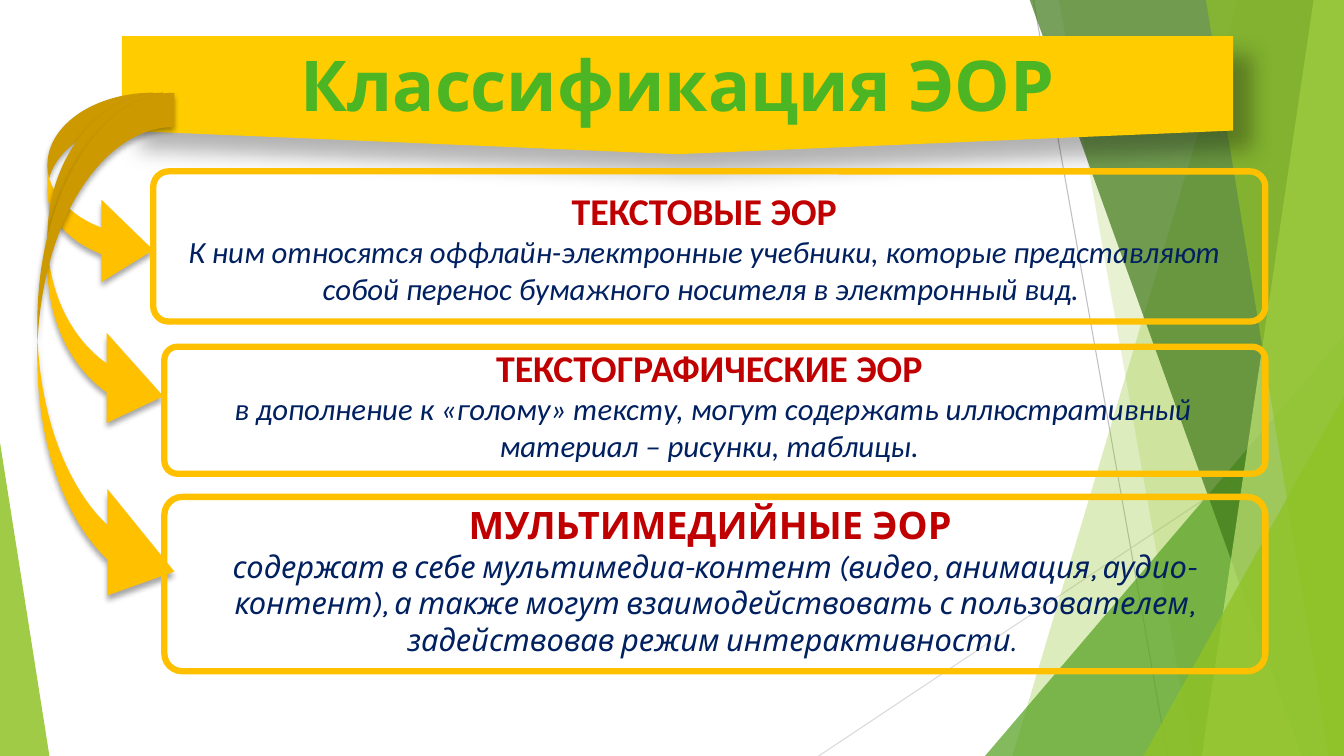
from lxml import etree
from pptx import Presentation
from pptx import util as u
from pptx.dml.color import RGBColor
from pptx.enum import shapes, text
from pptx.oxml.ns import qn

COLORS = {
    "lime": "90C226", "green": "54A021", "dark": "3F7819", "pale": "C0E474",
    "silver": "BFBFBF", "mist": "D9D9D9", "banner": "FFCC00", "amber": "FFC000",
    "title": "4CB523", "heading": "C00000", "body": "002060", "shadow": "000000",
}
TOP, RIGHT, BOTTOM = -0.01, 13.33, 7.5
KIND = shapes.MSO_SHAPE

# Each band reaches the right edge: top x, bottom x, colour, opacity in percent
BACK_BANDS = [(12.28, 10.04, "lime", 30), (10.5, 11.83, "lime", 20)]
FRONT_BANDS = [(10.21, 12.91, "dark", 70), (13.03, 11.92, "pale", 70),
               (11.96, 13.18, "lime", 65)]

# Arrow box, panel box, text box, anchor, font, heading, description
CLASSES = [
    ((0.47, 0.92, 1.05, 1.97), (1.52, 1.7, 11.03, 1.49), (1.42, 1.8, 11.13, 1.3),
     "MIDDLE", "Calibri", "ТЕКСТОВЫЕ ЭОР",
     "К ним относятся оффлайн-электронные учебники, которые представляют "
     "собой перенос бумажного носителя в электронный вид. "),
    ((0.47, 0.92, 1.15, 3.46), (1.63, 3.44, 10.92, 1.26), (1.63, 3.36, 10.81, 1.3),
     "MIDDLE", "Calibri", "ТЕКСТОГРАФИЧЕСКИЕ ЭОР",
     " в дополнение к «голому» тексту, могут содержать иллюстративный "
     "материал – рисунки, таблицы."),
    ((0.37, 0.92, 1.36, 5.28), (1.63, 4.93, 10.92, 1.73), (1.63, 4.93, 10.92, 1.67),
     "TOP", "Karla", "МУЛЬТИМЕДИЙНЫЕ ЭОР ",
     "содержат в себе мультимедиа-контент (видео, анимация, аудио-контент), "
     "а также могут взаимодействовать с пользователем, задействовав режим "
     "интерактивности. "),
]


def color(name):
    return RGBColor.from_string(COLORS[name])


def inches(values):
    return [u.Inches(value) for value in values]


class SlideBuilder:
    def __init__(self, page):
        self.page = page

    def paint(self, shape, fill, opacity=100):
        shape.shadow.inherit = False
        shape.line.fill.background()
        shape.fill.solid()
        shape.fill.fore_color.rgb = color(fill)
        if opacity < 100:
            tint = shape.element.spPr.find(".//" + qn("a:srgbClr"))
            etree.SubElement(tint, qn("a:alpha"), val=str(opacity * 1000))

    def cast_shadow(self, shape, opacity, blur, distance, angle):
        effects = shape.element.spPr.find(qn("a:effectLst"))
        outer = etree.SubElement(
            effects, qn("a:outerShdw"), blurRad=str(u.Pt(blur)),
            dist=str(u.Pt(distance)), dir=str(angle * 60000),
            algn="tl", rotWithShape="0")
        tint = etree.SubElement(outer, qn("a:srgbClr"), val=COLORS["shadow"])
        etree.SubElement(tint, qn("a:alpha"), val=str(opacity * 1000))

    def shape(self, kind, box, fill, opacity=100, adjust=()):
        shape = self.page.shapes.add_shape(kind, *inches(box))
        for index, value in enumerate(adjust):
            shape.adjustments[index] = value
        self.paint(shape, fill, opacity)
        return shape

    def band(self, top_x, bottom_x, fill, opacity):
        corners = [(RIGHT, TOP), (RIGHT, BOTTOM), (bottom_x, BOTTOM)]
        outline = self.page.shapes.build_freeform(*inches((top_x, TOP)))
        outline.add_line_segments([inches(corner) for corner in corners])
        self.paint(outline.convert_to_shape(), fill, opacity)

    def line(self, ends, stroke):
        line = self.page.shapes.add_connector(
            shapes.MSO_CONNECTOR.STRAIGHT, *inches(ends))
        line.line.color.rgb = color(stroke)
        line.line.width = u.Pt(0.75)
        etree.SubElement(line.element.spPr, qn("a:effectLst"))

    def arrow(self, box):
        arrow = self.shape(KIND.CURVED_RIGHT_ARROW, box, "amber",
                           adjust=(0.25, 0.778, 0.489))
        self.cast_shadow(arrow, 35, 4, 3, 90)

    def panel(self, box):
        panel = self.shape(KIND.ROUNDED_RECTANGLE, box, "amber", adjust=(0.103,))
        panel.fill.background()
        panel.line.color.rgb = color("amber")
        panel.line.width = u.Pt(4.5)

    def set_text(self, para, words, size, face, ink, bold=False, italic=False):
        para.text = words
        para.alignment = text.PP_ALIGN.CENTER
        font = para.font
        font.size, font.name, font.bold, font.italic = u.Pt(size), face, bold, italic
        font.color.rgb = color(ink)

    def title(self, box, words):
        """Put the title placeholder above the shapes drawn so far."""
        title = self.page.shapes.title
        title.left, title.top, title.width, title.height = inches(box)
        self.page.shapes.element.append(title.element)
        frame = title.text_frame
        frame.auto_size = text.MSO_AUTO_SIZE.NONE
        frame.vertical_anchor = text.MSO_ANCHOR.MIDDLE
        self.set_text(frame.paragraphs[0], words, 50, "Karla", "title", bold=True)

    def description(self, box, anchor, face, heading, body):
        frame = self.page.shapes.add_textbox(*inches(box)).text_frame
        frame.word_wrap = True
        frame.auto_size = text.MSO_AUTO_SIZE.SHAPE_TO_FIT_TEXT
        frame.vertical_anchor = text.MSO_ANCHOR[anchor]
        self.set_text(frame.paragraphs[0], heading, 27, face, "heading", bold=True)
        self.set_text(frame.add_paragraph(), body, 22, face, "body", italic=True)


def draw_background(builder):
    builder.line((10.25, 0, 11.58, 7.5), "silver")
    builder.line((13.33, 4.03, 8.12, 7.5), "mist")
    for band in BACK_BANDS:
        builder.band(*band)
    triangle = KIND.ISOSCELES_TRIANGLE
    builder.shape(triangle, (9.77, 3.33, 3.56, 4.17), "green", 72, (1,))
    for band in FRONT_BANDS:
        builder.band(*band)
    builder.shape(triangle, (11.34, 3.93, 1.99, 3.57), "lime", 80, (1,))
    builder.shape(triangle, (0, 4.39, 0.49, 3.11), "lime", 85, (0,))


def main():
    deck = Presentation()
    deck.slide_width, deck.slide_height = inches((13.33, 7.5))
    builder = SlideBuilder(deck.slides.add_slide(deck.slide_layouts[5]))
    draw_background(builder)
    banner = builder.shape(KIND.FLOWCHART_OFFPAGE_CONNECTOR,
                           (1.21, 0.36, 11.02, 1.17), "banner")
    builder.cast_shadow(banner, 30, 15, 18, 45)
    builder.title((1.21, 0.36, 11.02, 0.94), "Классификация ЭОР")
    for arrow, panel, *_ in CLASSES:
        builder.arrow(arrow)
        builder.panel(panel)
    for _, _, *content in CLASSES:
        builder.description(*content)
    deck.save("out.pptx")


if __name__ == "__main__":
    main()
